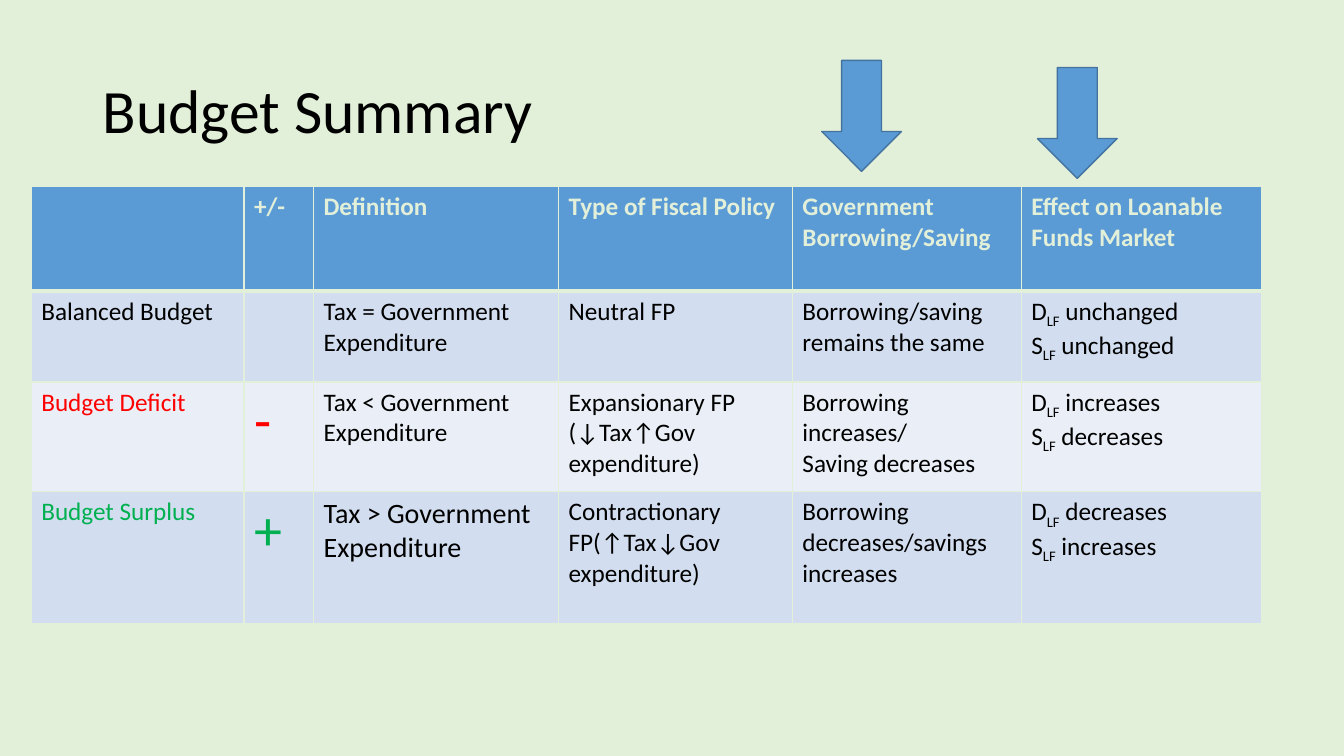
import pptx
import pptx.dml.color
import pptx.enum.shapes
import pptx.enum.text
import pptx.oxml
import pptx.oxml.ns
import pptx.util

Inches = pptx.util.Inches
Pt = pptx.util.Pt
RGBColor = pptx.dml.color.RGBColor

PALE_GREEN = RGBColor(0xE2, 0xEF, 0xD9)
BLUE = RGBColor(0x5B, 0x9B, 0xD5)
DARK_BLUE = RGBColor(0x43, 0x73, 0x9E)
BAND_DARK = RGBColor(0xD2, 0xDE, 0xEF)
BAND_LIGHT = RGBColor(0xEA, 0xEF, 0xF7)
BLACK = RGBColor(0x00, 0x00, 0x00)
RED = RGBColor(0xFF, 0x00, 0x00)
GREEN = RGBColor(0x00, 0xB0, 0x50)

COL_WIDTHS = [2.11, 0.69, 2.43, 2.32, 2.27, 2.38]
ROW_HEIGHTS = [1.04, 0.9, 1.09, 1.31]
SUBSCRIPT = "LF"
ROWS = [
    ["", "+/-", "Definition", "Type of Fiscal Policy",
     "Government Borrowing/Saving", "Effect on Loanable Funds Market"],
    ["Balanced Budget", "", "Tax = Government Expenditure", "Neutral FP",
     "Borrowing/saving remains the same", "DLF unchanged\nSLF unchanged"],
    ["Budget Deficit", "-", "Tax < Government Expenditure",
     "Expansionary FP (↓Tax↑Gov expenditure)",
     "Borrowing increases/\nSaving decreases", "DLF increases\nSLF decreases"],
    ["Budget Surplus", "+", "Tax > Government Expenditure",
     "Contractionary FP(↑Tax↓Gov expenditure)",
     "Borrowing decreases/savings increases", "DLF decreases\nSLF increases"],
]
ROW_FILLS = [BLUE, BAND_DARK, BAND_LIGHT, BAND_DARK]
LABEL_COLORS = [PALE_GREEN, BLACK, RED, GREEN]
SPECIAL_SIZES = {(2, 1): 40, (3, 1): 40, (3, 2): 20}


class SlideBuilder:
    font = "Calibri"

    def __init__(self, slide, background):
        self.slide = slide
        slide.background.fill.solid()
        slide.background.fill.fore_color.rgb = background

    def set_text(self, tf, text, size, color, bold=False):
        for i, line in enumerate(text.split("\n")):
            p = tf.add_paragraph() if i else tf.paragraphs[0]
            p.font.name = self.font
            p.font.size = Pt(size)
            p.font.color.rgb = color
            p.font.bold = bold
            for part in line.partition(SUBSCRIPT):
                if part:
                    r = p.add_run()
                    r.text = part
                    if part == SUBSCRIPT:
                        r.font._element.set("baseline", "-25000")

    def title(self, text, left, top, width, height):
        sp = self.slide.shapes.add_textbox(
            Inches(left), Inches(top), Inches(width), Inches(height))
        tf = sp.text_frame
        tf.word_wrap = True
        tf.vertical_anchor = pptx.enum.text.MSO_ANCHOR.MIDDLE
        self.set_text(tf, text, 44, BLACK)
        tf.paragraphs[0].line_spacing = 0.9

    def down_arrow(self, left, top):
        sp = self.slide.shapes.add_shape(
            pptx.enum.shapes.MSO_SHAPE.DOWN_ARROW,
            Inches(left), Inches(top), Inches(0.79), Inches(1.1))
        sp.shadow.inherit = False
        sp.fill.solid()
        sp.fill.fore_color.rgb = BLUE
        sp.line.color.rgb = DARK_BLUE
        sp.line.width = Pt(1)

    def borders(self, cell, widths):
        tc_pr = cell._tc.get_or_add_tcPr()
        for side, width in widths.items():
            tc_pr.append(pptx.oxml.parse_xml(
                f'<a:ln{side} {pptx.oxml.ns.nsdecls("a")} w="{Pt(width)}">'
                f'<a:solidFill><a:srgbClr val="{PALE_GREEN}"/></a:solidFill>'
                f'</a:ln{side}>'))

    def table(self, left, top):
        table = self.slide.shapes.add_table(
            len(ROWS), len(COL_WIDTHS), Inches(left), Inches(top),
            Inches(sum(COL_WIDTHS)), Inches(sum(ROW_HEIGHTS))).table
        table.horz_banding = False
        for column, width in zip(table.columns, COL_WIDTHS):
            column.width = Inches(width)
        for i, (row, height) in enumerate(zip(table.rows, ROW_HEIGHTS)):
            row.height = Inches(height)
            for j, cell in enumerate(row.cells):
                # The rule under the header is heavier than the rest
                self.borders(cell, {"L": 1, "R": 1, "T": 3 if i == 1 else 1,
                                    "B": 3 if i == 0 else 1})
                cell.fill.solid()
                cell.fill.fore_color.rgb = ROW_FILLS[i]
                color = LABEL_COLORS[i] if i == 0 or j < 2 else BLACK
                self.set_text(cell.text_frame, ROWS[i][j],
                              SPECIAL_SIZES.get((i, j), 18), color, bold=i == 0)


def main():
    prs = pptx.Presentation()
    prs.slide_width = Inches(13.33)
    prs.slide_height = Inches(7.5)
    s = SlideBuilder(prs.slides.add_slide(prs.slide_layouts[6]), PALE_GREEN)

    # Heading
    s.title("Budget Summary", 0.92, 0.4, 11.5, 1.45)

    # Comparison of budget positions
    s.table(0.31, 1.85)

    # Arrows pointing at the last two columns
    s.down_arrow(8.15, 0.6)
    s.down_arrow(10.29, 0.67)

    prs.save("out.pptx")


if __name__ == "__main__":
    main()
